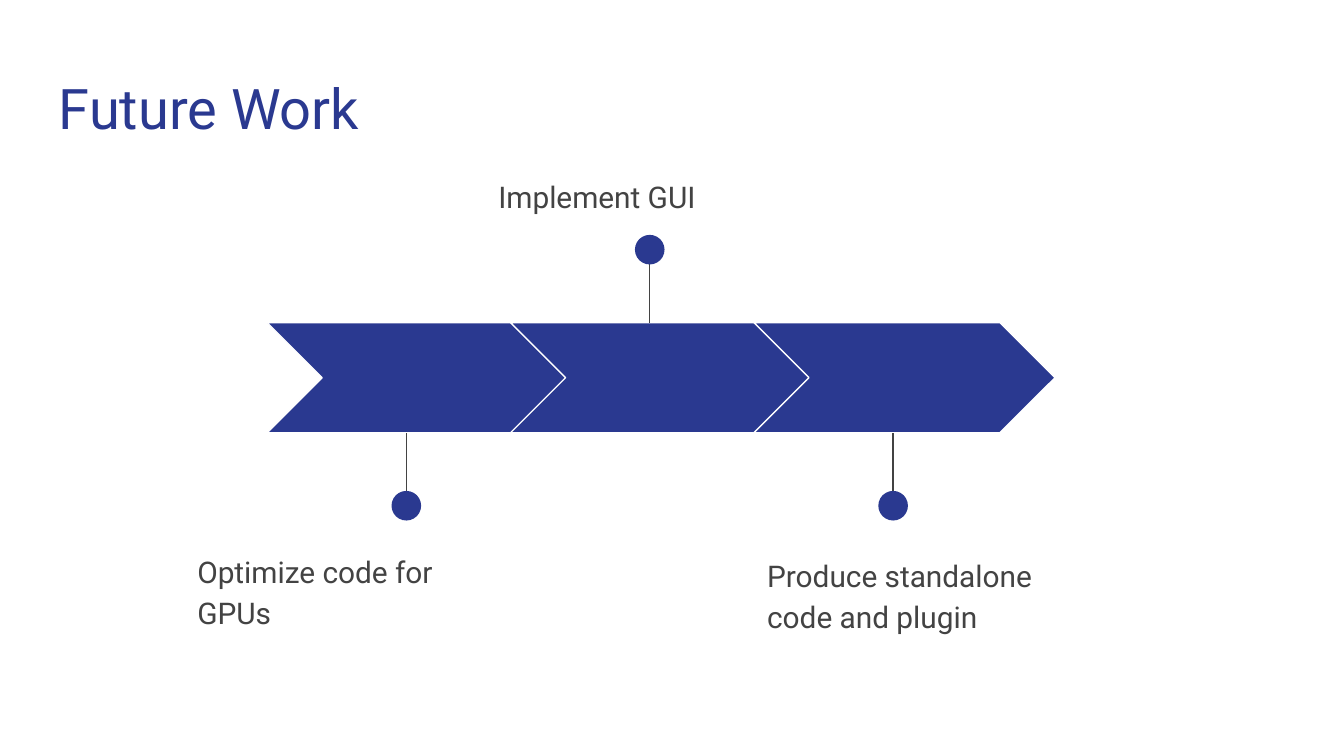
from lxml import etree
from pptx import Presentation
from pptx.dml.color import RGBColor
from pptx.enum.shapes import MSO_CONNECTOR, MSO_SHAPE
from pptx.enum.text import MSO_ANCHOR, PP_ALIGN
from pptx.oxml.ns import qn
from pptx.util import Cm, Pt

CHEVRON, OVAL = MSO_SHAPE.CHEVRON, MSO_SHAPE.OVAL
STRAIGHT = MSO_CONNECTOR.STRAIGHT
TOP, LEFT = MSO_ANCHOR.TOP, PP_ALIGN.LEFT

FONT = "Roboto"
BLUE, GRAY, WHITE = "2A3990", "434343", "FFFFFF"
INSET = 0.25
DOT, STEM = 0.56, 1.55
LABEL_W, LABEL_H = 6.22, 2.51

# Text, whether its pin points up, and label offset from the step's left and the band's top
STEPS = [
    ("Optimize code for GPUs", False, -1.57, 4.01),
    ("Implement GUI", True, -0.48, -3.08),
    ("Produce standalone code and plugin", False, 0, 4.09),
]


def color(code):
    return RGBColor.from_string(code)


def write(shape, text, size, code, spacing=1):
    frame = shape.text_frame
    frame.text = text
    frame.word_wrap = True
    frame.vertical_anchor = TOP
    frame.margin_left = frame.margin_right = Cm(INSET)
    frame.margin_top = frame.margin_bottom = Cm(INSET)
    par = frame.paragraphs[0]
    par.alignment = LEFT
    par.line_spacing = spacing
    font = par.runs[0].font
    font.name, font.size = FONT, Pt(size)
    font.color.rgb = color(code)


def add_title(slide, x, y, w, h):
    title = slide.shapes.title
    title.left, title.top, title.width, title.height = Cm(x), Cm(y), Cm(w), Cm(h)
    write(title, "Future Work", 30, BLUE)


def add_solid(slide, kind, x, y, w, h):
    shape = slide.shapes.add_shape(kind, Cm(x), Cm(y), Cm(w), Cm(h))
    shape.shadow.inherit = False
    shape.fill.solid()
    shape.fill.fore_color.rgb = color(BLUE)
    shape.line.fill.background()
    return shape


def add_pin(slide, x, edge, up):
    """Draw a stem from the band's edge to a dot centred on x."""
    side = -1 if up else 1
    stem = slide.shapes.add_connector(
        STRAIGHT, Cm(x), Cm(edge + side * STEM), Cm(x), Cm(edge))
    stem.line.color.rgb = color(GRAY)
    stem.line.width = Pt(0.75)
    etree.SubElement(stem._element.spPr, qn("a:effectLst"))
    mid = edge + side * (STEM - 0.17)
    add_solid(slide, OVAL, x - DOT / 2, mid - DOT / 2, DOT, DOT)


def add_step(slide, x, y, w, h, step):
    text, up, dx, dy = step
    arrow = add_solid(slide, CHEVRON, x, y, w, h)
    arrow.adjustments[0] = 0.5
    arrow.line.color.rgb = color(WHITE)
    arrow.line.width = Pt(0.75)
    add_pin(slide, x + 2.63, y if up else y + h, up)
    label = slide.shapes.add_textbox(
        Cm(x + dx), Cm(y + dy), Cm(LABEL_W), Cm(LABEL_H))
    write(label, text, 16, GRAY, 1.15)


def add_band(slide, x, y, w, h):
    """Fill the box with chevrons that overlap up to a thin seam."""
    wide = 5.69
    pitch = (w - wide) / (len(STEPS) - 1)
    for i, step in enumerate(STEPS):
        add_step(slide, x + i * pitch, y, wide, h, step)


def main():
    deck = Presentation()
    deck.slide_width, deck.slide_height = Cm(25.4), Cm(14.29)
    slide = deck.slides.add_slide(deck.slide_layouts[5])
    slide.background.fill.solid()
    slide.background.fill.fore_color.rgb = color(WHITE)
    add_title(slide, 0.86, 1.14, 23.67, 1.68)
    add_band(slide, 5.05, 6.1, 14.89, 2.08)
    deck.save("out.pptx")


if __name__ == "__main__":
    main()
